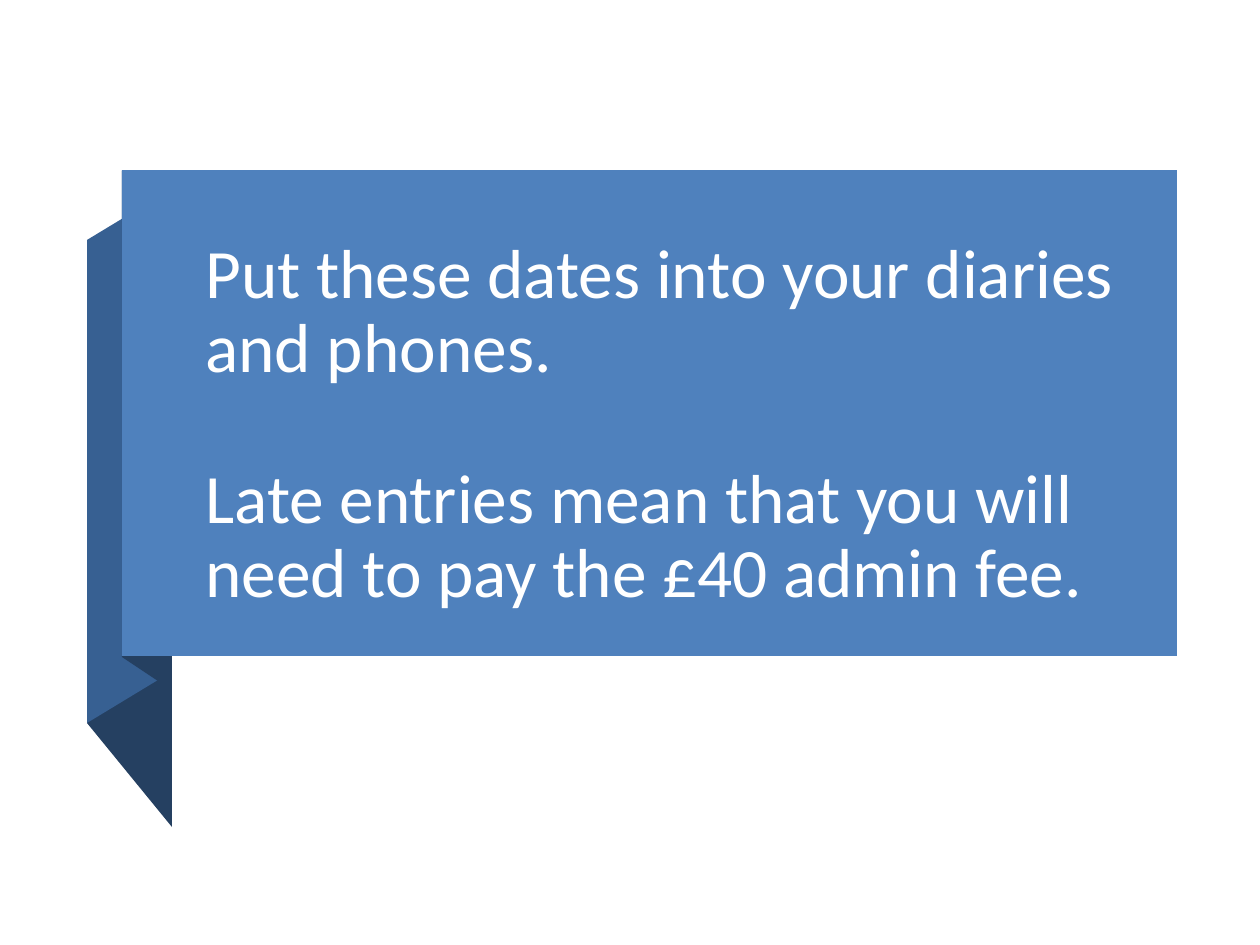
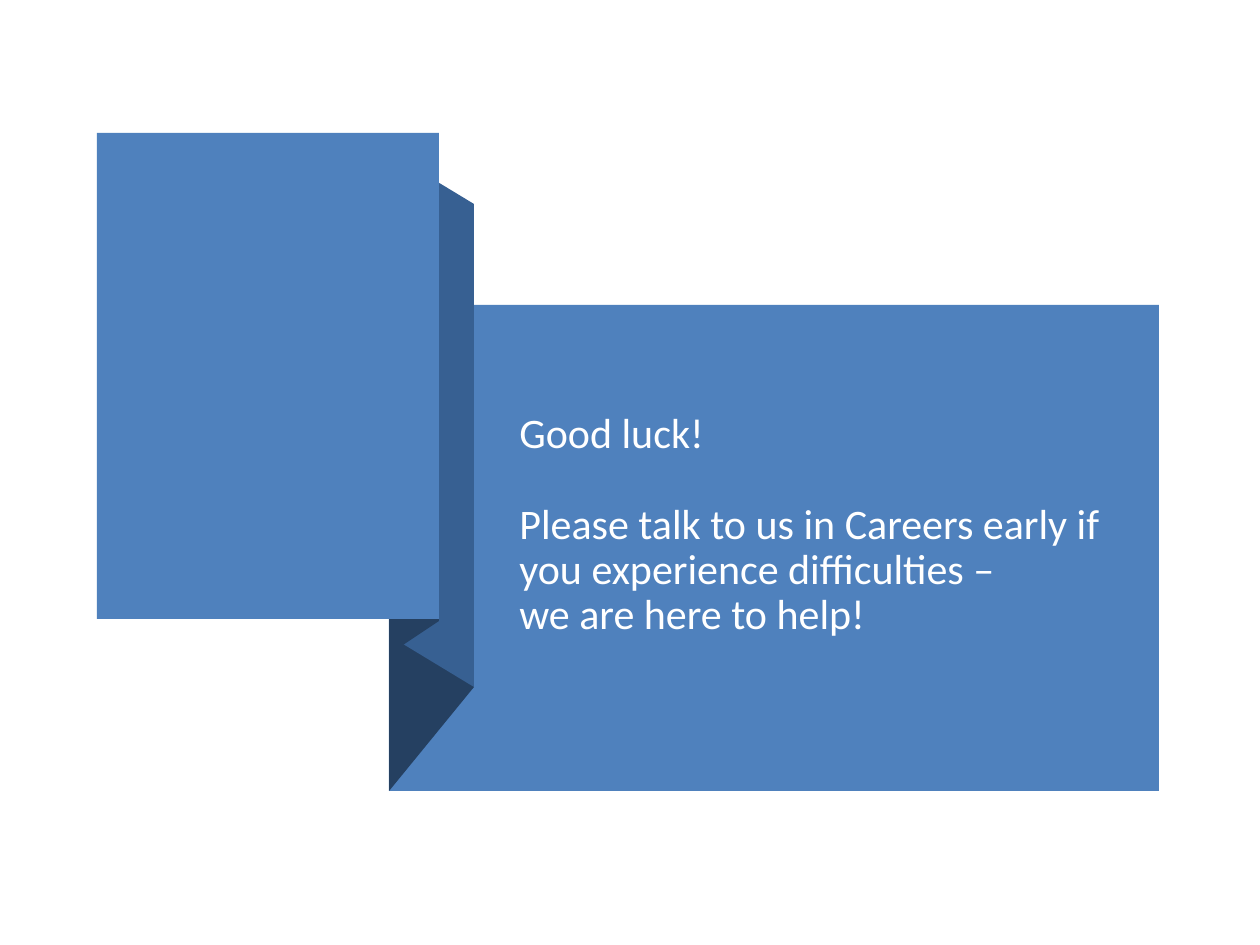
from pptx import Presentation
from pptx.dml.color import RGBColor
from pptx.enum.shapes import MSO_SHAPE
from pptx.enum.text import MSO_ANCHOR
from pptx.util import Pt

PX = 914400 / 126
PANEL_BLUE = RGBColor(0x4F, 0x81, 0xBD)
FOLD_BLUE = RGBColor(0x37, 0x60, 0x92)
SHADE_BLUE = RGBColor(0x25, 0x40, 0x61)
WHITE = RGBColor(0xFF, 0xFF, 0xFF)
FONT = "Calibri"
PANEL_HEIGHT = 486

RIBBON_PARTS = [
    (SHADE_BLUE, [(0, 553), (85, 657), (85, 178), (0, 74)]),
    (FOLD_BLUE, [(0, 553), (71, 510), (71, 27), (0, 70)]),
    (SHADE_BLUE, [(35, 487), (71, 511), (71, 25), (35, 1)]),
]

SLIDES = [
    {
        "ribbon": (87, 170, 1),
        "back_panels": [],
        "front_panels": [(122, 170, 1055)],
        "text_box": (193, 222, 955, 397),
        "anchor": MSO_ANCHOR.BOTTOM,
        "size": 39.6,
        "gap": 43,
        "paragraphs": [
            "Put these dates into your diaries and phones.",
            "Late entries mean that you will need to pay the £40 admin fee.",
        ],
    },
    {
        "ribbon": (474, 134, -1),
        "back_panels": [(389, 305, 770)],
        "front_panels": [(97, 133, 342)],
        "text_box": (507, 331, 607, 389),
        "anchor": MSO_ANCHOR.MIDDLE,
        "size": 24,
        "gap": 26,
        "paragraphs": [
            "Good luck!",
            "Please talk to us in Careers early if you experience difficulties –",
            "we are here to help!",
        ],
    },
]


def paint(shape, color):
    shape.shadow.inherit = False
    shape.fill.solid()
    shape.fill.fore_color.rgb = color
    shape.line.fill.background()


def add_panels(slide, panels):
    for left, top, width in panels:
        box = [round(n * PX) for n in (left, top, width, PANEL_HEIGHT)]
        paint(slide.shapes.add_shape(MSO_SHAPE.RECTANGLE, *box), PANEL_BLUE)


presentation = Presentation()
presentation.slide_width = round(1260 * PX)
presentation.slide_height = round(945 * PX)

for content in SLIDES:
    slide = presentation.slides.add_slide(presentation.slide_layouts[6])
    add_panels(slide, content["back_panels"])

    edge, top, direction = content["ribbon"]
    for color, offsets in RIBBON_PARTS:
        points = [(edge + direction * x, top + y) for x, y in offsets]
        builder = slide.shapes.build_freeform(*points[0], scale=PX)
        builder.add_line_segments(points[1:], close=True)
        paint(builder.convert_to_shape(), color)

    add_panels(slide, content["front_panels"])

    text_box = slide.shapes.add_textbox(*[round(n * PX) for n in content["text_box"]])
    frame = text_box.text_frame
    frame.word_wrap = True
    frame.vertical_anchor = content["anchor"]
    for index, text in enumerate(content["paragraphs"]):
        paragraph = frame.add_paragraph() if index else frame.paragraphs[0]
        paragraph.line_spacing = 0.9
        paragraph.space_after = Pt(0 if index else content["gap"])
        run = paragraph.add_run()
        run.text = text
        run.font.name = FONT
        run.font.size = Pt(content["size"])
        run.font.color.rgb = WHITE

presentation.save("out.pptx")
